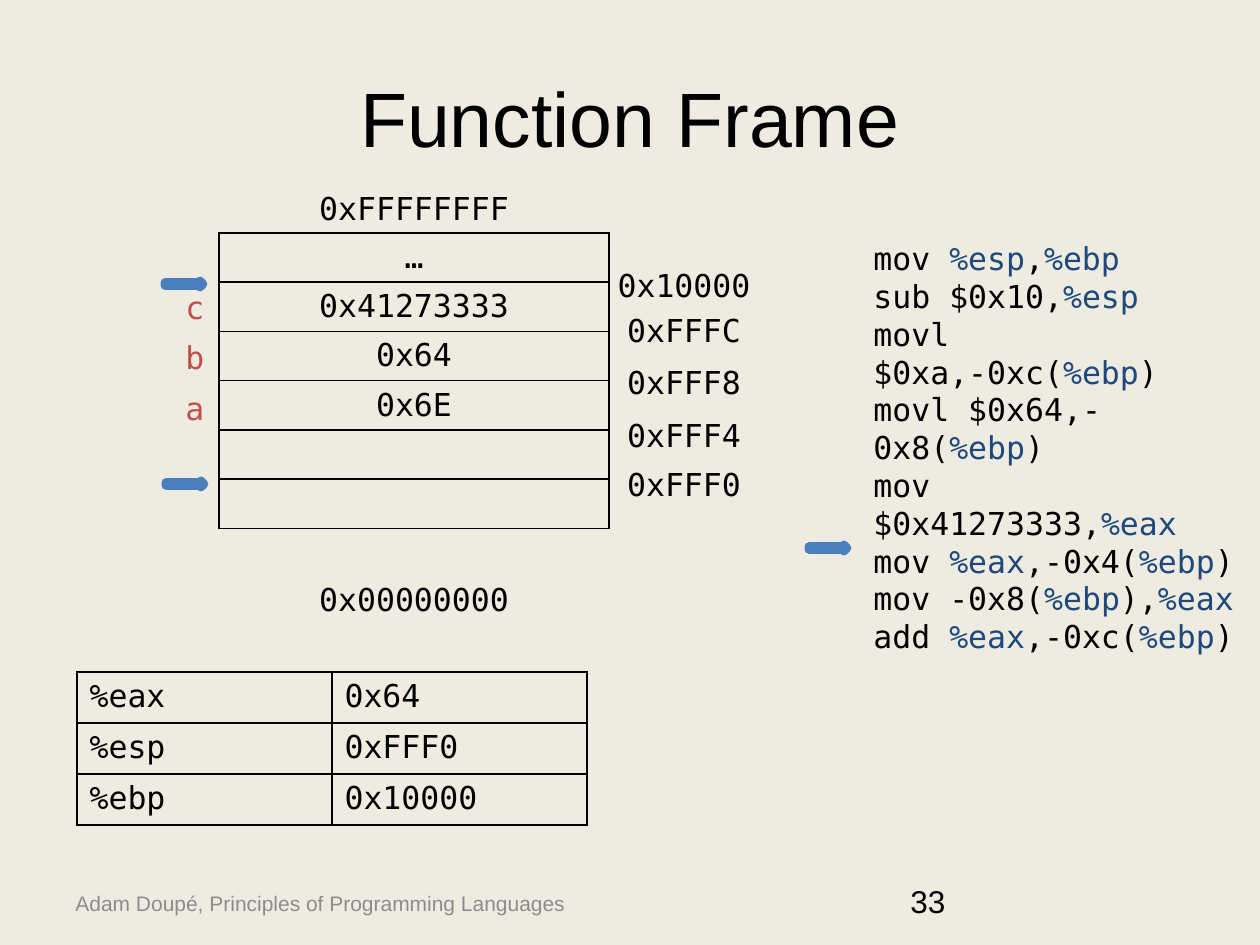
from dataclasses import dataclass

import pptx
import pptx.dml.color
import pptx.enum.shapes
import pptx.enum.text
import pptx.oxml
import pptx.oxml.ns
import pptx.util

RGB = pptx.dml.color.RGBColor
ALIGN = pptx.enum.text.PP_ALIGN
ANCHOR = pptx.enum.text.MSO_ANCHOR

BACKGROUND = RGB(0xEE, 0xEC, 0xE1)
BLACK = RGB(0x00, 0x00, 0x00)
GREY = RGB(0x8C, 0x8C, 0x8C)
RED = RGB(0xC0, 0x50, 0x4D)
REGISTER_BLUE = RGB(0x1F, 0x49, 0x7D)
ARROW_LINE = RGB(0x4B, 0x7E, 0xBC)
ARROW_FILL = (RGB(0x3F, 0x80, 0xCE), RGB(0xA4, 0xC4, 0xFF))

SANS = "Arial"
MONO = "DejaVu Sans Mono"
PX_PER_INCH = 126
LABEL_WIDTH, LABEL_HEIGHT = 290, 51
ARROW_WIDTH, ARROW_HEIGHT = 38, 6


def px(length: int) -> pptx.util.Emu:
    return pptx.util.Emu(round(length * 914400 / PX_PER_INCH))


@dataclass(frozen=True)
class Label:
    text: str
    left: int
    top: int
    width: int = LABEL_WIDTH
    color: RGB = BLACK
    size: int = 18
    font: str = MONO
    align: ALIGN = ALIGN.CENTER
    anchor: ANCHOR = ANCHOR.TOP


@dataclass(frozen=True)
class Grid:
    rows: tuple
    left: int
    top: int
    column_width: int
    row_height: int
    align: ALIGN


STACK = Grid((("…",), ("0x41273333",), ("0x64",), ("0x6E",), ("",), ("",)),
             219, 233, 390, 49, ALIGN.CENTER)
REGISTERS = Grid((("%eax", "0x64"), ("%esp", "0xFFF0"), ("%ebp", "0x10000")),
                 77, 672, 255, 51, ALIGN.LEFT)

LABELS = [
    Label("Adam Doupé, Principles of Programming Languages", 63, 878, 537,
          GREY, 12, SANS, ALIGN.LEFT, ANCHOR.MIDDLE),
    Label("33", 898, 876, 294, font=SANS, align=ALIGN.LEFT),
    Label("0xFFFFFFFF", 269, 183),
    Label("0x00000000", 269, 574),
]
ADDRESSES = {"0x10000": 260, "0xFFFC": 305, "0xFFF8": 357, "0xFFF4": 410, "0xFFF0": 459}
VARIABLES = {"c": 282, "b": 332, "a": 383}
LABELS += [Label(text, 539, top) for text, top in ADDRESSES.items()]
LABELS += [Label(text, 50, top, color=RED) for text, top in VARIABLES.items()]

ARROWS = [(809, 545), (166, 481), (165, 281)]

CODE = (
    "mov %esp,%ebp",
    "sub $0x10,%esp",
    "movl $0xa,-0xc(%ebp)",
    "movl $0x64,-0x8(%ebp)",
    "mov $0x41273333,%eax",
    "mov %eax,-0x4(%ebp)",
    "mov -0x8(%ebp),%eax",
    "add %eax,-0xc(%ebp)",
)


def format_font(font, name: str, size: int, color: RGB) -> None:
    font.name = name
    font.size = pptx.util.Pt(size)
    font.color.rgb = color


def add_title(slide, text: str) -> None:
    title = slide.shapes.title
    title.left, title.top, title.width, title.height = px(63), px(38), px(1134), px(157)
    title.text_frame.text = text
    title.text_frame.vertical_anchor = ANCHOR.MIDDLE
    para = title.text_frame.paragraphs[0]
    para.alignment = ALIGN.CENTER
    format_font(para.runs[0].font, SANS, 44, BLACK)


def add_label(slide, label: Label) -> None:
    box = slide.shapes.add_textbox(px(label.left), px(label.top),
                                   px(label.width), px(LABEL_HEIGHT))
    frame = box.text_frame
    frame.word_wrap = True
    frame.vertical_anchor = label.anchor
    frame.text = label.text
    para = frame.paragraphs[0]
    para.alignment = label.align
    format_font(para.runs[0].font, label.font, label.size, label.color)


def add_borders(cell) -> None:
    """Draw a 1 pt black line on all four sides of the cell."""
    properties = cell._tc.get_or_add_tcPr()
    for index, side in enumerate(("lnL", "lnR", "lnT", "lnB")):
        properties.insert(index, pptx.oxml.parse_xml(
            f'<a:{side} {pptx.oxml.ns.nsdecls("a")} w="12700"><a:solidFill>'
            f'<a:srgbClr val="{BLACK}"/></a:solidFill></a:{side}>'))


def add_grid(slide, grid: Grid) -> None:
    row_count, column_count = len(grid.rows), len(grid.rows[0])
    table = slide.shapes.add_table(
        row_count, column_count, px(grid.left), px(grid.top),
        px(grid.column_width * column_count), px(grid.row_height * row_count)).table
    table.first_row = table.horz_banding = False
    for column in table.columns:
        column.width = px(grid.column_width)
    for row, values in zip(table.rows, grid.rows):
        row.height = px(grid.row_height)
        for cell, value in zip(row.cells, values):
            cell.fill.background()
            add_borders(cell)
            cell.text = value
            para = cell.text_frame.paragraphs[0]
            para.alignment = grid.align
            format_font(para.font, MONO, 18, BLACK)
            for run in para.runs:
                format_font(run.font, MONO, 18, BLACK)


def add_code_run(para, text: str, color: RGB) -> None:
    if text:
        run = para.add_run()
        run.text = text
        format_font(run.font, MONO, 18, color)


def add_code(slide, lines: tuple) -> None:
    """Write assembly lines, colouring each register (% and three letters)."""
    frame = slide.shapes.add_textbox(px(861), px(233), px(399), px(430)).text_frame
    frame.word_wrap = True
    for index, line in enumerate(lines):
        para = frame.add_paragraph() if index else frame.paragraphs[0]
        start, *parts = line.split("%")
        add_code_run(para, start, BLACK)
        for part in parts:
            add_code_run(para, "%" + part[:3], REGISTER_BLUE)
            add_code_run(para, part[3:], BLACK)


def add_arrow(slide, left: int, top: int) -> None:
    arrow = slide.shapes.add_shape(pptx.enum.shapes.MSO_SHAPE.RIGHT_ARROW, px(left), px(top),
                                   px(ARROW_WIDTH), px(ARROW_HEIGHT))
    arrow.shadow.inherit = False
    arrow.fill.gradient()
    arrow.fill.gradient_angle = 90
    for stop, color in zip(arrow.fill.gradient_stops, ARROW_FILL):
        stop.color.rgb = color
    arrow.line.color.rgb = ARROW_LINE
    arrow.line.width = pptx.util.Pt(5)


def main() -> None:
    deck = pptx.Presentation()
    deck.slide_width, deck.slide_height = px(1260), px(945)
    slide = deck.slides.add_slide(deck.slide_layouts.get_by_name("Title Only"))
    slide.background.fill.solid()
    slide.background.fill.fore_color.rgb = BACKGROUND
    add_title(slide, "Function Frame")
    for grid in (STACK, REGISTERS):
        add_grid(slide, grid)
    for label in LABELS:
        add_label(slide, label)
    add_code(slide, CODE)
    for left, top in ARROWS:
        add_arrow(slide, left, top)
    deck.save("out.pptx")


if __name__ == "__main__":
    main()
